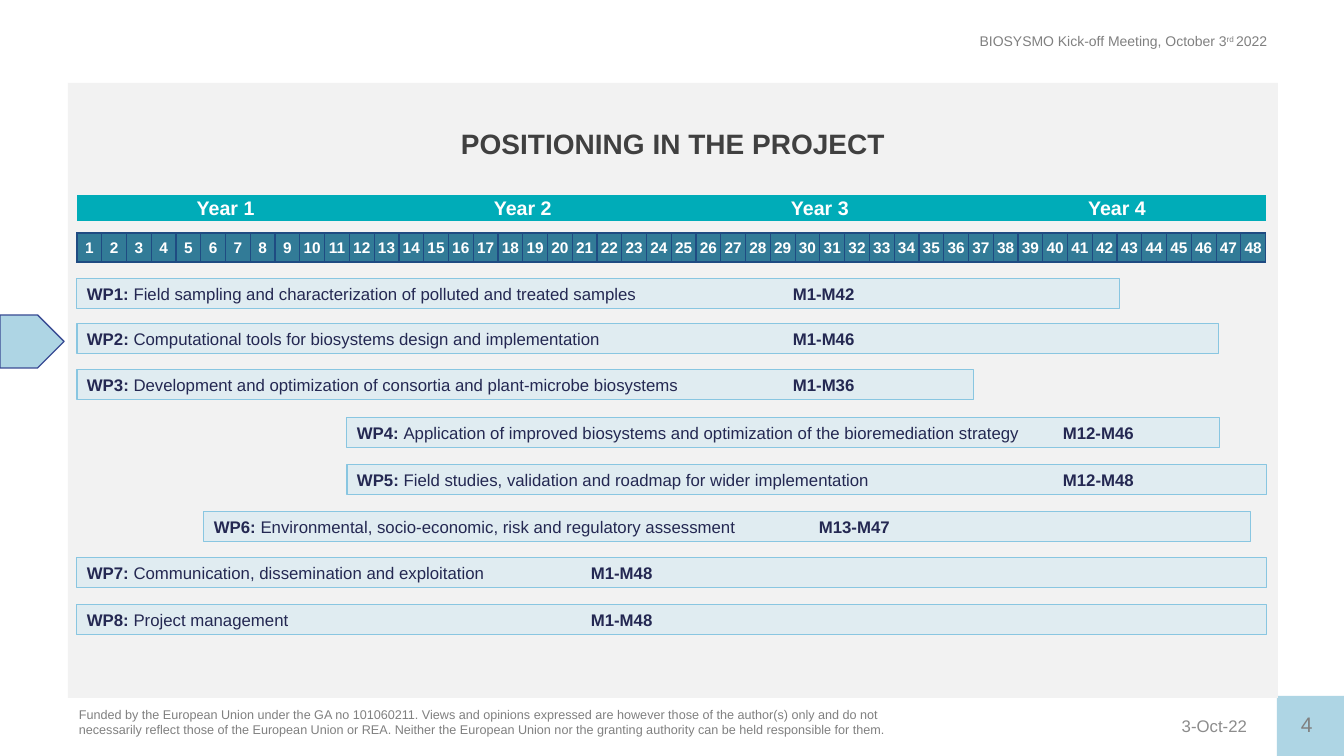
from dataclasses import dataclass

from lxml import etree
from pptx import Presentation
from pptx.dml.color import RGBColor
from pptx.enum.shapes import MSO_SHAPE
from pptx.enum.text import MSO_ANCHOR, MSO_AUTO_SIZE, PP_ALIGN
from pptx.oxml.ns import qn
from pptx.util import Emu, Pt

RECTANGLE, ARROW = MSO_SHAPE.RECTANGLE, MSO_SHAPE.RIGHT_ARROW
TOP, MIDDLE = MSO_ANCHOR.TOP, MSO_ANCHOR.MIDDLE
LEFT, CENTER, RIGHT = PP_ALIGN.LEFT, PP_ALIGN.CENTER, PP_ALIGN.RIGHT
NO_AUTOFIT = MSO_AUTO_SIZE.NONE

WHITE = RGBColor(0xFF, 0xFF, 0xFF)
PANEL_GRAY = RGBColor(0xF2, 0xF2, 0xF2)
TITLE_GRAY = RGBColor(0x40, 0x40, 0x40)
NOTE_GRAY = RGBColor(0x80, 0x80, 0x80)
DATE_GRAY = RGBColor(0x8C, 0x8C, 0x8C)
LIGHT_BLUE = RGBColor(0xAE, 0xD5, 0xE4)
MARKER_LINE = RGBColor(0x3A, 0x4C, 0x94)
YEAR_TEAL = RGBColor(0x00, 0xAC, 0xB8)
MONTH_BLUE = RGBColor(0x32, 0x7B, 0x97)
MONTH_LINE = RGBColor(0x1F, 0x4B, 0x82)
BAR_FILL = RGBColor(0xE0, 0xEC, 0xF1)
BAR_LINE = RGBColor(0x89, 0xC6, 0xE1)
BAR_TEXT = RGBColor(0x24, 0x28, 0x52)

SLIDE_WIDTH, SLIDE_HEIGHT = 1344, 756
EMU_PER_PX = 12192000 / SLIDE_WIDTH
FONT = "Arial"
YEARS, MONTHS_PER_YEAR = 4, 12
MONTHS = YEARS * MONTHS_PER_YEAR
CHART_LEFT, CHART_WIDTH = 77, 1190
NO_TABLE_STYLE = "{2D5ABB26-0587-4C30-8999-92F81FD0307C}"


@dataclass(frozen=True)
class WorkPackage:
    label: str
    task: str
    months: str
    left: int
    top: int
    width: int
    tab: int


@dataclass(frozen=True)
class Note:
    spans: tuple[str, ...]
    left: int
    top: int
    width: int
    height: int
    size: int
    color: RGBColor = NOTE_GRAY
    align: PP_ALIGN = LEFT
    anchor: MSO_ANCHOR = TOP
    wrap: bool = True


WORK_PACKAGES = [
    WorkPackage("WP1: ", "Field sampling and characterization of polluted and treated samples",
                "M1-M42", 77, 279, 1043, 706),
    WorkPackage("WP2: ", "Computational tools for biosystems design and implementation",
                "M1-M46", 77, 324, 1142, 706),
    WorkPackage("WP3: ", "Development and optimization of consortia and plant-microbe biosystems",
                "M1-M36", 77, 370, 897, 706),
    WorkPackage("WP4: ", "Application of improved biosystems and optimization of the "
                "bioremediation strategy", "M12-M46", 347, 418, 873, 706),
    WorkPackage("WP5: ", "Field studies, validation and roadmap for wider implementation",
                "M12-M48", 347, 465, 920, 706),
    WorkPackage("WP6: ", "Environmental, socio-economic, risk and regulatory assessment",
                "M13-M47", 204, 512, 1047, 605),
    WorkPackage("WP7: ", "Communication, dissemination and exploitation",
                "M1-M48", 77, 558, 1190, 504),
    WorkPackage("WP8: ", "Project management", "M1-M48", 77, 605, 1190, 504),
]

# The second span of a note is superscript
NOTES = [
    Note(("BIOSYSMO Kick-off Meeting, October 3", "rd ", "2022"),
         831, 28, 446, 27, 10, align=RIGHT),
    Note(("3-Oct-22",), 803, 706, 454, 40, 12, DATE_GRAY, RIGHT, MIDDLE),
    Note(("Funded by the European Union under the GA no 101060211. Views and opinions "
          "expressed are however those of the author(s) only and do not necessarily reflect "
          "those of the European Union or REA. Neither the European Union nor the granting "
          "authority can be held responsible for them.",), 69, 702, 852, 40, 9),
    Note(("4",), 1291, 707, 46, 35, 15, wrap=False),
]


def px(length: int) -> Emu:
    return Emu(round(length * EMU_PER_PX))


def place(left: int, top: int, width: int, height: int) -> tuple[Emu, ...]:
    return px(left), px(top), px(width), px(height)


def set_font(para, size: int, color: RGBColor, bold: bool = False) -> None:
    font = para.font
    font.name, font.size, font.bold = FONT, Pt(size), bold
    font.color.rgb = color


def add_block(slide, kind, area, fill: RGBColor, line=None, line_width: float = 1):
    block = slide.shapes.add_shape(kind, *place(*area))
    block.shadow.inherit = False
    block.fill.solid()
    block.fill.fore_color.rgb = fill
    if line is None:
        block.line.fill.background()
    else:
        block.line.color.rgb = line
        block.line.width = Pt(line_width)
    return block


def add_note(slide, note: Note) -> None:
    box = slide.shapes.add_textbox(*place(note.left, note.top, note.width, note.height))
    frame = box.text_frame
    frame.word_wrap, frame.vertical_anchor = note.wrap, note.anchor
    para = frame.paragraphs[0]
    para.alignment = note.align
    set_font(para, note.size, note.color)
    for index, text in enumerate(note.spans):
        span = para.add_run()
        span.text = text
        if index == 1:
            span._r.get_or_add_rPr().set("baseline", "30000")


def add_title(slide, panel) -> None:
    title = slide.shapes.title
    title.left, title.top, title.width, title.height = place(68, 121, 1210, 44)
    frame = title.text_frame
    frame.text = "POSITIONING IN THE PROJECT"
    frame.auto_size, frame.vertical_anchor = NO_AUTOFIT, MIDDLE
    para = frame.paragraphs[0]
    para.alignment = CENTER
    set_font(para, 20, TITLE_GRAY, bold=True)
    panel.element.addnext(title.element)


def add_borders(cell) -> None:
    properties = cell._tc.get_or_add_tcPr()
    for side in ("a:lnL", "a:lnR", "a:lnT", "a:lnB"):
        line = etree.SubElement(properties, qn(side), w=str(Pt(1)))
        fill = etree.SubElement(line, qn("a:solidFill"))
        etree.SubElement(fill, qn("a:srgbClr"), val=str(MONTH_LINE))


def fill_cell(cell, text: str, size: int, fill: RGBColor) -> None:
    cell.fill.solid()
    cell.fill.fore_color.rgb = fill
    cell.text = text
    para = cell.text_frame.paragraphs[0]
    para.alignment = CENTER
    set_font(para, size, WHITE, bold=True)


def add_calendar(slide) -> None:
    frame = slide.shapes.add_table(3, MONTHS, *place(CHART_LEFT, 195, CHART_WIDTH, 67))
    table = frame.table
    table.first_row = table.horz_banding = False
    next(frame.element.iter(qn("a:tableStyleId"))).text = NO_TABLE_STYLE
    for row, height in zip(table.rows, (26, 12, 29)):
        row.height = px(height)
    for column in table.columns:
        column.width = Emu(px(CHART_WIDTH) // MONTHS)
    for cell in table.iter_cells():
        cell.margin_left = cell.margin_right = cell.margin_top = px(1)
        cell.margin_bottom = 0
        cell.vertical_anchor = MIDDLE

    # Year headings, the narrow gap row and the months
    for year in range(YEARS):
        first = year * MONTHS_PER_YEAR
        heading = table.cell(0, first)
        heading.merge(table.cell(0, first + MONTHS_PER_YEAR - 1))
        fill_cell(heading, f"Year {year + 1}", 14, YEAR_TEAL)
    for month in range(MONTHS):
        add_borders(table.cell(2, month))
        fill_cell(table.cell(2, month), str(month + 1), 11, MONTH_BLUE)
    for cell in table.iter_cells():
        if not cell.text:
            para = cell.text_frame.paragraphs[0]
            etree.SubElement(para._p, qn("a:endParaRPr"), sz="100")


def add_bar(slide, package: WorkPackage) -> None:
    area = (package.left, package.top, package.width, 30)
    bar = add_block(slide, RECTANGLE, area, BAR_FILL, BAR_LINE, 0.75)
    frame = bar.text_frame
    frame.word_wrap, frame.vertical_anchor = True, MIDDLE
    para = frame.paragraphs[0]
    para.alignment = LEFT
    stops = etree.SubElement(para._p.get_or_add_pPr(), qn("a:tabLst"))
    etree.SubElement(stops, qn("a:tab"), pos=str(px(package.tab)), algn="l")
    set_font(para, 12, BAR_TEXT)
    for text, bold in ((package.label, True), (package.task + "\t", False),
                       (package.months, True)):
        span = para.add_run()
        span.text, span.font.bold = text, bold


def main() -> None:
    deck = Presentation()
    deck.slide_width, deck.slide_height = px(SLIDE_WIDTH), px(SLIDE_HEIGHT)
    page = deck.slides.add_slide(deck.slide_layouts[5])

    # Background panel, page corner and title
    add_block(page, RECTANGLE, (1277, 696, 67, 61), LIGHT_BLUE)
    panel = add_block(page, RECTANGLE, (68, 83, 1210, 615), PANEL_GRAY)
    add_title(page, panel)

    # Project calendar with its work packages
    add_calendar(page)
    for package in WORK_PACKAGES:
        add_bar(page, package)

    # Header, footer and marker of the current package
    for note in NOTES:
        add_note(page, note)
    marker = add_block(page, ARROW, (0, 315, 64, 53), LIGHT_BLUE, MARKER_LINE)
    marker.adjustments[0], marker.adjustments[1] = 1, 0.5
    deck.save("out.pptx")


if __name__ == "__main__":
    main()
